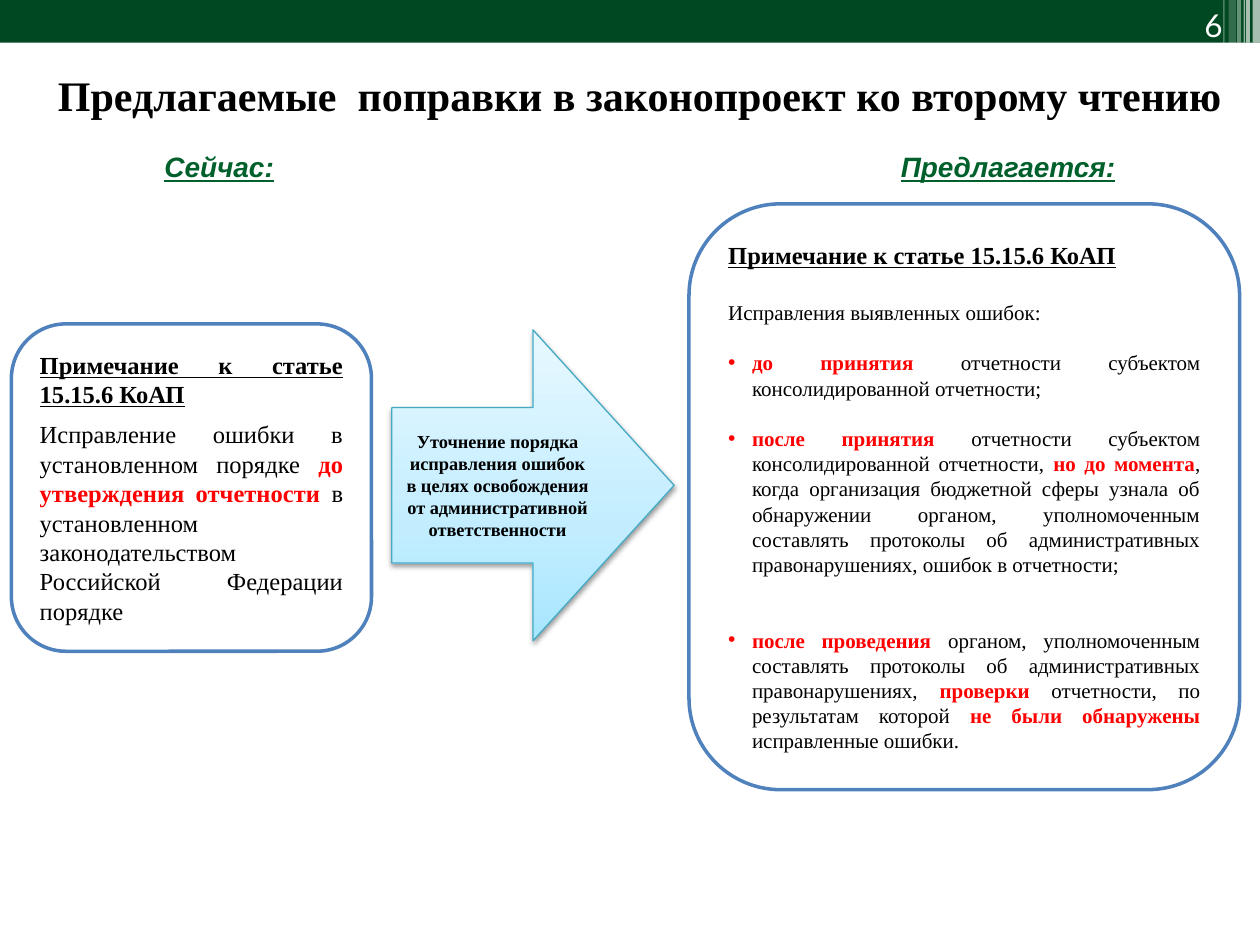
from dataclasses import dataclass

from pptx import Presentation
from pptx.dml.color import RGBColor
from pptx.enum.shapes import MSO_SHAPE
from pptx.enum.text import MSO_ANCHOR, MSO_AUTO_SIZE, PP_ALIGN
from pptx.oxml import parse_xml
from pptx.oxml.ns import nsdecls, qn
from pptx.oxml.xmlchemy import OxmlElement
from pptx.util import Cm, Pt


@dataclass(frozen=True)
class Theme:
    serif: str = "Times New Roman"
    sans: str = "Arial"
    number_font: str = "Lato"
    header: str = "004821"
    label: str = "00602B"
    white: str = "FFFFFF"
    text: str = "000000"
    accent: str = "FF0000"
    border: str = "4F81BD"
    arrow_line: str = "46AAC5"
    arrow_stops: tuple = ((0, "A7E6FF"), (35, "C1EDFF"), (100, "E7F8FF"))
    title_size: float = 24
    number_size: float = 18
    label_size: float = 16
    heading_size: float = 14
    detail_size: float = 12
    arrow_size: float = 10.5


THEME = Theme()

# Content: text between asterisks is emphasised
TITLE = "Предлагаемые  поправки в законопроект ко второму чтению"
PAGE = "6"
NOW_LABEL = "Сейчас:"
PROPOSED_LABEL = "Предлагается:"
ARROW_TEXT = ("Уточнение порядка исправления ошибок в целях освобождения "
              "от административной ответственности")
HEADING = "Примечание к статье 15.15.6 КоАП"

# Paragraphs: kind, size, space before (pt), text
NOW = [
    ("heading", THEME.heading_size, 0, HEADING),
    ("body", THEME.heading_size, 6,
     "Исправление ошибки в установленном порядке *до утверждения отчетности *"
     "в установленном законодательством Российской Федерации порядке"),
]
PROPOSED = [
    ("heading", THEME.heading_size, 0, HEADING),
    ("body", THEME.detail_size, 17, "Исправления выявленных ошибок:"),
    ("bullet", THEME.detail_size, 14.4,
     "*до принятия *отчетности субъектом консолидированной отчетности;"),
    ("bullet", THEME.detail_size, 14.4,
     "*после принятия *отчетности субъектом консолидированной отчетности, "
     "*но до момента*, когда организация бюджетной сферы узнала об обнаружении "
     "органом, уполномоченным составлять протоколы об административных "
     "правонарушениях, ошибок в отчетности;"),
    ("bullet", THEME.detail_size, 28.8,
     "*после проведения* органом, уполномоченным составлять протоколы об "
     "административных правонарушениях, *проверки* отчетности, по результатам "
     "которой *не были обнаружены *исправленные ошибки."),
]

# Header stripes: left, width, height (cm), opacity (%)
HEADER_HEIGHT = 0.86
STRIPES = [
    (25.25, 0.15, HEADER_HEIGHT, 65),
    (25.12, 0.08, HEADER_HEIGHT, 65),
    (25.07, 0.03, HEADER_HEIGHT, 60),
    (24.94, 0.08, HEADER_HEIGHT, 40),
    (24.77, 0.15, 0.91, 20),
    (24.66, 0.03, 0.91, 30),
]


def cm_box(box):
    return [Cm(length) for length in box]


def style(font, name, size, color=None, bold=False, italic=False, underline=False):
    font.name, font.size = name, Pt(size)
    font.bold, font.italic, font.underline = bold, italic, underline
    if color:
        font.color.rgb = RGBColor.from_string(color)


def add_block(slide, kind, box, fill=None, line=None, line_width=1):
    block = slide.shapes.add_shape(kind, *cm_box(box))
    block.shadow.inherit = False
    if fill:
        block.fill.solid()
        block.fill.fore_color.rgb = RGBColor.from_string(fill)
    if line:
        block.line.color.rgb = RGBColor.from_string(line)
        block.line.width = Pt(line_width)
    else:
        block.line.fill.background()
    return block


def add_label(slide, box, text, align, wrap=True, grow=True, **font):
    frame = slide.shapes.add_textbox(*cm_box(box)).text_frame
    frame.word_wrap = wrap
    frame.auto_size = MSO_AUTO_SIZE.SHAPE_TO_FIT_TEXT if grow else MSO_AUTO_SIZE.NONE
    paragraph = frame.paragraphs[0]
    paragraph.text, paragraph.alignment = text, align
    style(paragraph.font, **font)


def add_bullet(paragraph, color):
    properties = paragraph._p.get_or_add_pPr()
    properties.set("marL", str(Cm(0.48)))
    properties.set("indent", str(-Cm(0.48)))
    properties.append(parse_xml(
        f'<a:buClr {nsdecls("a")}><a:srgbClr val="{color}"/></a:buClr>'))
    for tag, key, value in (("a:buFont", "typeface", THEME.sans),
                            ("a:buChar", "char", "•")):
        element = OxmlElement(tag)
        element.set(key, value)
        properties.append(element)


def add_note(slide, box, paragraphs):
    note = add_block(slide, MSO_SHAPE.ROUNDED_RECTANGLE, box,
                     THEME.white, THEME.border, 2)
    frame = note.text_frame
    frame.word_wrap = True
    frame.vertical_anchor = MSO_ANCHOR.MIDDLE
    for index, (kind, size, before, text) in enumerate(paragraphs):
        paragraph = frame.add_paragraph() if index else frame.paragraphs[0]
        paragraph.alignment = PP_ALIGN.JUSTIFY
        if before:
            paragraph.space_before = Pt(before)
        if kind == "bullet":
            add_bullet(paragraph, THEME.accent)
        heading = kind == "heading"
        style(paragraph.font, THEME.serif, size, bold=heading, underline=heading)
        for part, words in enumerate(text.split("*")):
            if words:
                run = paragraph.add_run()
                run.text = words
                emphasised = part % 2 == 1
                run.font.bold = heading or emphasised
                run.font.color.rgb = RGBColor.from_string(
                    THEME.accent if emphasised else THEME.text)


def add_arrow(slide, box):
    arrow = add_block(slide, MSO_SHAPE.RIGHT_ARROW, box,
                      line=THEME.arrow_line, line_width=0.75)
    stops = "".join(f'<a:gs pos="{pos * 1000}"><a:srgbClr val="{color}"/></a:gs>'
                    for pos, color in THEME.arrow_stops)
    properties = arrow._element.spPr
    properties.find(qn("a:prstGeom")).addnext(parse_xml(
        f'<a:gradFill {nsdecls("a")} rotWithShape="1"><a:gsLst>{stops}</a:gsLst>'
        '<a:lin ang="16200000" scaled="0"/></a:gradFill>'))
    properties.find(qn("a:effectLst")).append(parse_xml(
        f'<a:outerShdw {nsdecls("a")} blurRad="{Pt(3.1)}" dist="{Pt(1.6)}" '
        'dir="5400000" rotWithShape="0"><a:srgbClr val="000000">'
        '<a:alpha val="38000"/></a:srgbClr></a:outerShdw>'))
    frame = arrow.text_frame
    frame.word_wrap = True
    frame.vertical_anchor = MSO_ANCHOR.MIDDLE
    paragraph = frame.paragraphs[0]
    paragraph.text, paragraph.alignment = ARROW_TEXT, PP_ALIGN.CENTER
    style(paragraph.font, THEME.serif, THEME.arrow_size, THEME.text, bold=True)


def main():
    deck = Presentation()
    deck.slide_width, deck.slide_height = Cm(25.4), Cm(19.05)
    slide = deck.slides.add_slide(deck.slide_layouts[6])

    # Header band with translucent stripes and the page number
    add_block(slide, MSO_SHAPE.RECTANGLE, (0, 0, 25.4, HEADER_HEIGHT), THEME.header)
    for left, width, height, opacity in STRIPES:
        stripe = add_block(slide, MSO_SHAPE.RECTANGLE, (left, 0, width, height), THEME.white)
        alpha = OxmlElement("a:alpha")
        alpha.set("val", str(opacity * 1000))
        stripe._element.spPr.find(qn("a:solidFill"))[0].append(alpha)
    add_label(slide, (22.61, 0, 2.29, 0.94), PAGE, PP_ALIGN.RIGHT, grow=False,
              name=THEME.number_font, size=THEME.number_size, color=THEME.white)

    # Title and column labels
    add_label(slide, (0.79, 1.27, 24.21, 1.27), TITLE, PP_ALIGN.CENTER,
              name=THEME.serif, size=THEME.title_size, color=THEME.text, bold=True)
    label_font = dict(name=THEME.sans, size=THEME.label_size, color=THEME.label,
                      bold=True, italic=True, underline=True)
    add_label(slide, (3.05, 2.9, 2.74, 0.94), NOW_LABEL, PP_ALIGN.CENTER,
              wrap=False, **label_font)
    add_label(slide, (17.91, 2.9, 5.21, 0.94), PROPOSED_LABEL, PP_ALIGN.LEFT, **label_font)

    # Current and proposed wording, with the change between them
    add_note(slide, (0.23, 6.53, 7.26, 6.6), NOW)
    add_note(slide, (13.89, 4.11, 11.1, 11.81), PROPOSED)
    add_arrow(slide, (7.9, 6.65, 5.69, 6.27))

    deck.save("out.pptx")


if __name__ == "__main__":
    main()
